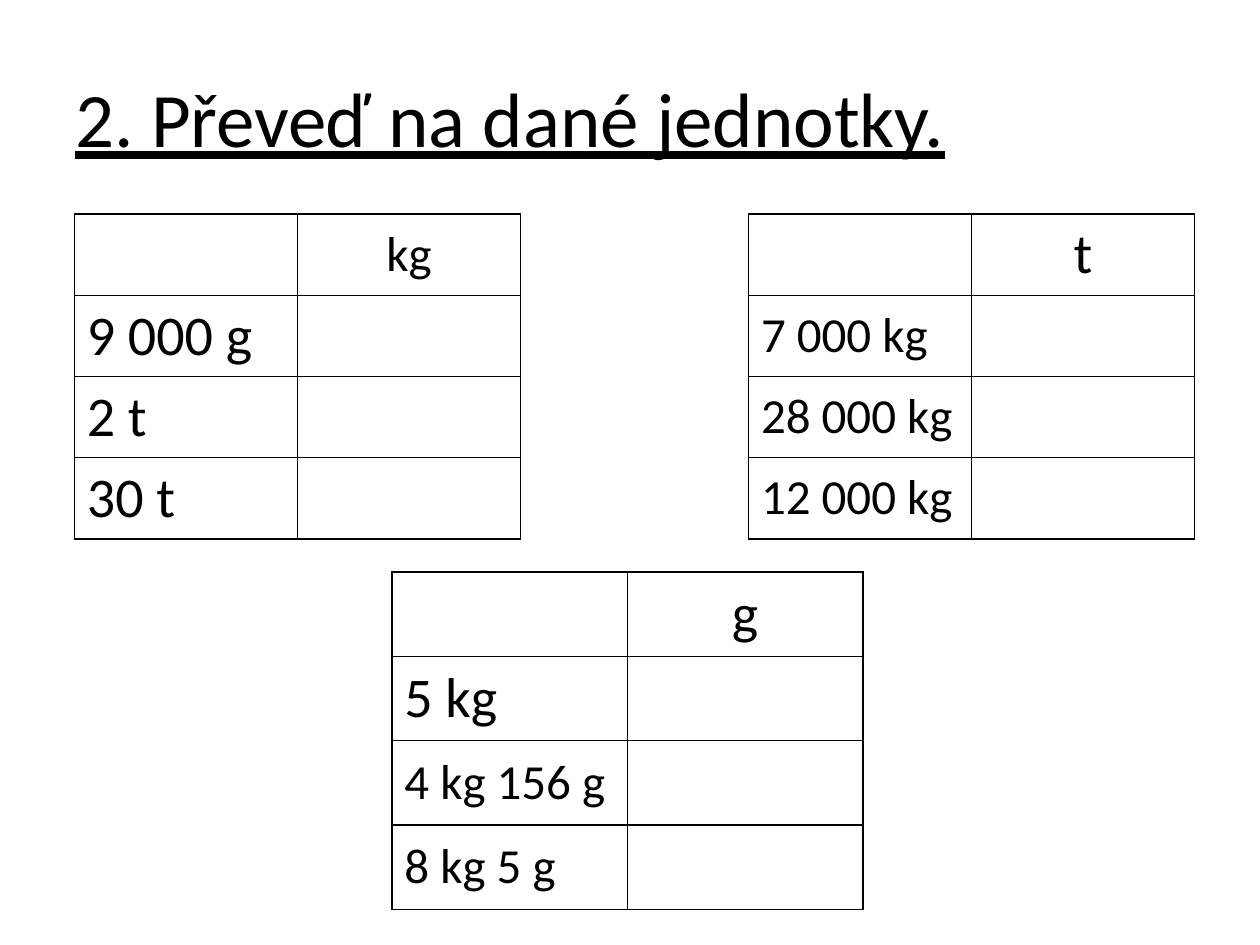
"""Build a worksheet slide with three unit conversion tables."""
from lxml.etree import SubElement
from pptx import Presentation
from pptx.dml.color import RGBColor
from pptx.enum.text import MSO_ANCHOR as Anchor, PP_ALIGN as Align
from pptx.oxml.ns import qn
from pptx.util import Pt

FONT = "Calibri"
BLACK = RGBColor(0, 0, 0)
TITLE = "2. Převeď na dané jednotky."
TABLES = [
    dict(left=42.5, top=122.4, column=127.5, row=46.4, unit=("kg", 28),
         amounts=[("9 000 g", 32), ("2 t", 32), ("30 t", 32)]),
    dict(left=223.9, top=326.9, column=134.6, row=48.2, unit=("g", 32),
         amounts=[("5 kg", 32), ("4 kg 156 g", 28), ("8 kg 5 g", 28)]),
    dict(left=427.7, top=122.4, column=127.5, row=46.4, unit=("t", 32),
         amounts=[("7 000 kg", 28), ("28 000 kg", 28), ("12 000 kg", 28)]),
]


def add_text(frame, text, size, align=Align.LEFT):
    para = frame.paragraphs[0]
    para.alignment = align
    span = para.add_run()
    span.text = text
    span.font.name = FONT
    span.font.size = Pt(size)
    span.font.color.rgb = BLACK
    return span


def style_cell(cell):
    cell.vertical_anchor = Anchor.MIDDLE
    properties = cell._tc.get_or_add_tcPr()
    for side in ("a:lnL", "a:lnR", "a:lnT", "a:lnB"):
        line = SubElement(properties, qn(side), w=str(Pt(1)))
        fill = SubElement(line, qn("a:solidFill"))
        SubElement(fill, qn("a:srgbClr"), val=str(BLACK))
    cell.fill.background()


def add_conversion_table(page, left, top, column, row, unit, amounts):
    count = len(amounts) + 1
    table = page.shapes.add_table(
        count, 2, Pt(left), Pt(top), Pt(2 * column), Pt(count * row)).table
    table.first_row = table.horz_banding = False
    for table_column in table.columns:
        table_column.width = Pt(column)
    for table_row in table.rows:
        table_row.height = Pt(row)
    for cell in table.iter_cells():
        style_cell(cell)
    add_text(table.cell(0, 1).text_frame, *unit, Align.CENTER)
    for index, amount in enumerate(amounts, 1):
        add_text(table.cell(index, 0).text_frame, *amount)


def main():
    deck = Presentation()
    deck.slide_width, deck.slide_height = Pt(720), Pt(540)
    page = deck.slides.add_slide(deck.slide_layouts[6])
    box = page.shapes.add_textbox(Pt(36), Pt(21.6), Pt(648), Pt(90))
    box.text_frame.word_wrap = True
    box.text_frame.vertical_anchor = Anchor.MIDDLE
    add_text(box.text_frame, TITLE, 44).font.underline = True
    for table in TABLES:
        add_conversion_table(page, **table)
    deck.save("out.pptx")


if __name__ == "__main__":
    main()
